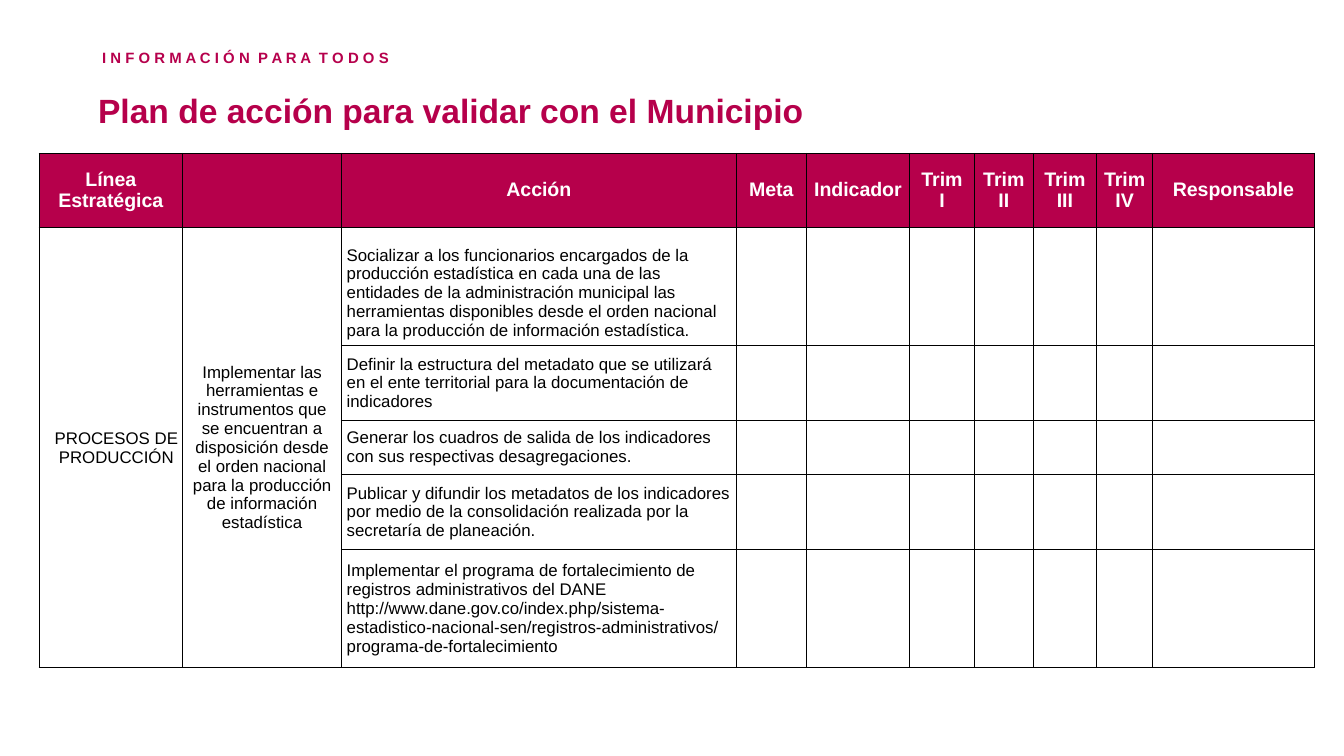
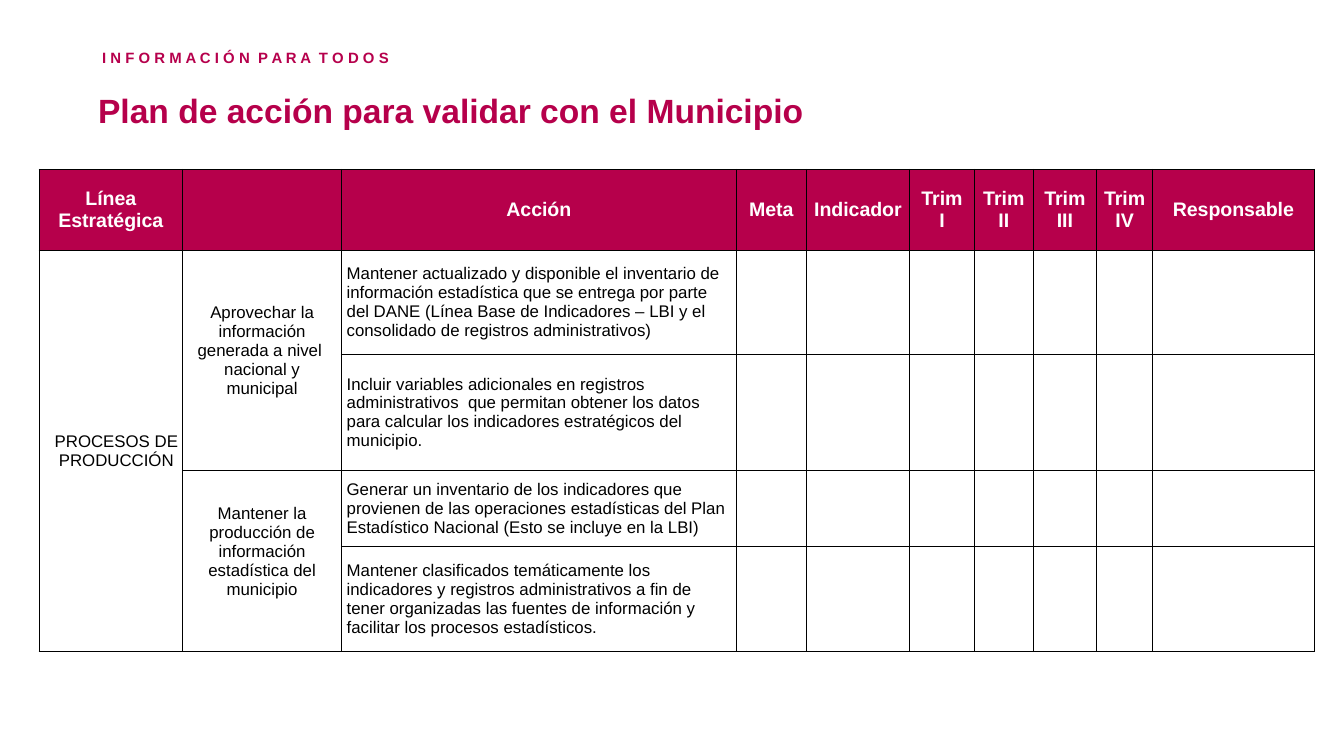
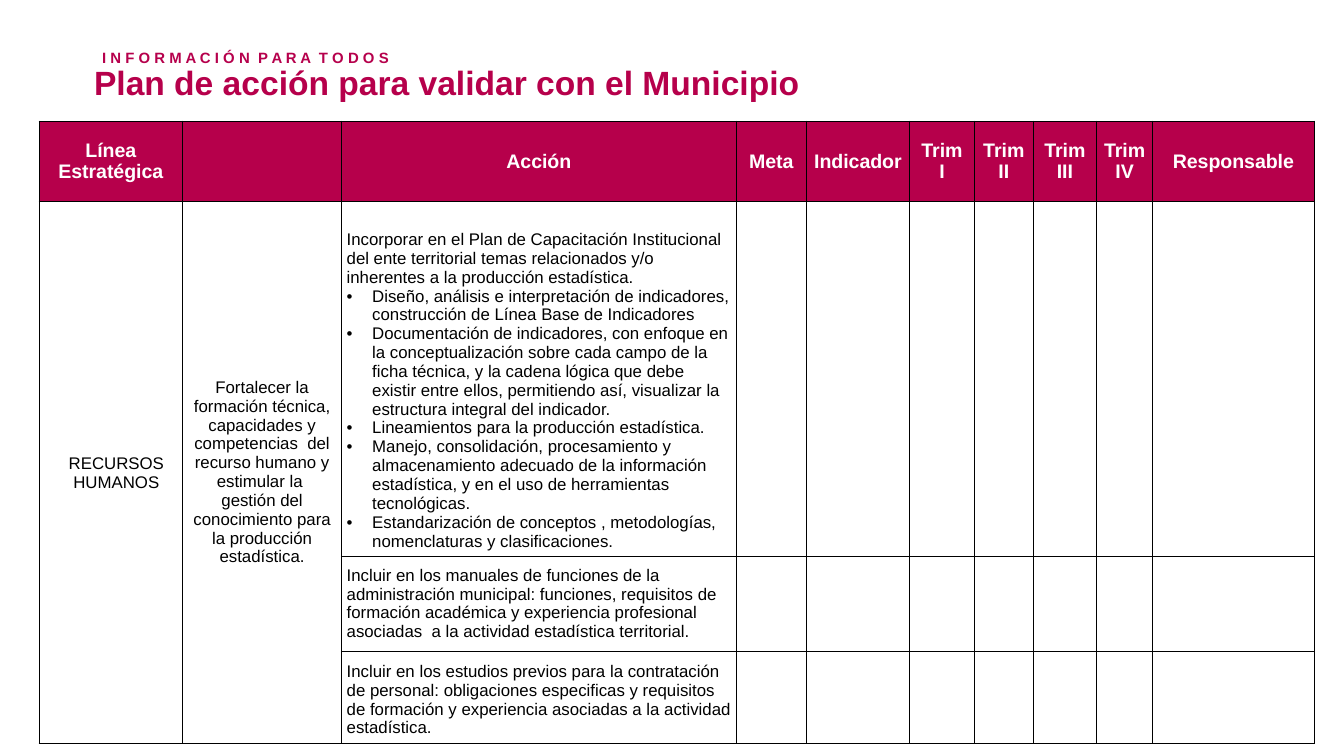
"""Build three action-plan slides, each with a heading and a plan table."""
from lxml import etree
from pptx import Presentation
from pptx.dml.color import RGBColor
from pptx.enum.text import MSO_ANCHOR, PP_ALIGN
from pptx.oxml.ns import qn
from pptx.util import Inches, Pt

LEFT, CENTER, JUSTIFY = PP_ALIGN.LEFT, PP_ALIGN.CENTER, PP_ALIGN.JUSTIFY
TOP, MIDDLE, BOTTOM = MSO_ANCHOR.TOP, MSO_ANCHOR.MIDDLE, MSO_ANCHOR.BOTTOM

CRIMSON = RGBColor(0xB6, 0x00, 0x4B)
TAGLINE_CRIMSON = RGBColor(0xB6, 0x00, 0x4C)
WHITE = RGBColor(0xFF, 0xFF, 0xFF)
BLACK = RGBColor(0x00, 0x00, 0x00)
FONT = "Arial"

TAGLINE = "I N F O R M A C I Ó N  P A R A  T O D O S"
TITLE = "Plan de acción para validar con el Municipio"
TABLE_LEFT = 0.29
COLUMNS = [
    ("Línea Estratégica", 1.07), ("", 1.18), ("Acción", 2.94), ("Meta", 0.52),
    ("Indicador", 0.77), (("Trim", "I"), 0.48), (("Trim", "II"), 0.44),
    (("Trim", "III"), 0.47), (("Trim", "IV"), 0.42), ("Responsable", 1.2),
]
NO_INSETS = (0, 0, 0, 0)
LINE_INSETS = (0.09, 0.01, 0.01, 0)
BODY_INSETS = (0.04, 0.04, 0.04, 0.04)
RAISED_INSETS = (0.04, 0.04, 0.04, 0.18)

PLANS = [
    {
        "title_at": (0.72, 0.67), "table_top": 1.14, "header_height": 0.55,
        "line": "PROCESOS DE PRODUCCIÓN", "strategy_insets": BODY_INSETS,
        "strategies": [
            ("Implementar las herramientas e instrumentos que se encuentran a disposición "
             "desde el orden nacional para la producción de información estadística", [
                 (0.88, BOTTOM, "Socializar a los funcionarios encargados de la producción "
                  "estadística en cada una de las entidades de la administración municipal las "
                  "herramientas disponibles desde el orden nacional para la producción de "
                  "información estadística."),
                 (0.56, MIDDLE, "Definir la estructura del metadato que se utilizará en el ente "
                  "territorial para la documentación de indicadores"),
                 (0.4, MIDDLE, "Generar los cuadros de salida de los indicadores con sus "
                  "respectivas desagregaciones."),
                 (0.56, MIDDLE, "Publicar y difundir los metadatos de los indicadores por medio "
                  "de la consolidación realizada por la secretaría de planeación."),
                 (0.88, MIDDLE, "Implementar el programa de fortalecimiento de registros "
                  "administrativos del DANE http://www.dane.gov.co/index.php/"
                  "sistema-estadistico-nacional-sen/registros-administrativos/"
                  "programa-de-fortalecimiento"),
             ]),
        ],
    },
    {
        "title_at": (0.72, 0.67), "table_top": 1.26, "header_height": 0.6,
        "line": "PROCESOS DE PRODUCCIÓN", "strategy_insets": RAISED_INSETS,
        "strategies": [
            ("Aprovechar la información generada a nivel  nacional y municipal", [
                (0.78, MIDDLE, "Mantener actualizado y disponible el inventario de información "
                 "estadística que se entrega por parte del DANE (Línea Base de Indicadores – LBI "
                 "y el consolidado de registros administrativos)"),
                (0.86, MIDDLE, "Incluir variables adicionales en registros administrativos  que "
                 "permitan obtener los datos para calcular los indicadores estratégicos del "
                 "municipio."),
            ]),
            ("Mantener la producción de información estadística del municipio", [
                (0.57, MIDDLE, "Generar un inventario de los indicadores que provienen de las "
                 "operaciones estadísticas del Plan Estadístico Nacional (Esto se incluye en la "
                 "LBI)"),
                (0.78, MIDDLE, "Mantener clasificados temáticamente los indicadores y registros "
                 "administrativos a fin de tener organizadas las fuentes de información y "
                 "facilitar los procesos estadísticos."),
            ]),
        ],
    },
    {
        "title_at": (0.69, 0.46), "table_top": 0.9, "header_height": 0.6,
        "line": "RECURSOS HUMANOS", "strategy_insets": BODY_INSETS,
        "strategies": [
            ("Fortalecer la formación técnica, capacidades y competencias  del recurso humano y "
             "estimular la  gestión del conocimiento para la producción estadística.", [
                 (2.63, BOTTOM, (
                     "Incorporar en el Plan de Capacitación Institucional del ente territorial "
                     "temas relacionados y/o inherentes a la producción estadística.",
                     "Diseño, análisis e interpretación de indicadores, construcción de Línea "
                     "Base de Indicadores",
                     "Documentación de indicadores, con enfoque en la conceptualización sobre "
                     "cada campo de la ficha técnica, y la cadena lógica que debe existir entre "
                     "ellos, permitiendo así, visualizar la estructura integral del indicador.",
                     "Lineamientos para la producción estadística.",
                     "Manejo, consolidación, procesamiento y almacenamiento adecuado de la "
                     "información estadística, y en el uso de herramientas tecnológicas.",
                     "Estandarización de conceptos , metodologías, nomenclaturas y "
                     "clasificaciones.")),
                 (0.71, MIDDLE, "Incluir en los manuales de funciones de la administración "
                  "municipal: funciones, requisitos de formación académica y experiencia "
                  "profesional asociadas  a la actividad estadística territorial."),
                 (0.68, BOTTOM, "Incluir en los estudios previos para la contratación de "
                  "personal: obligaciones especificas y requisitos de formación y experiencia "
                  "asociadas a la actividad estadística."),
             ]),
        ],
    },
]


def write_text(container, text, size=9, color=BLACK, bold=False, align=LEFT, anchor=MIDDLE,
               insets=BODY_INSETS, bullets=False, line_spacing=None):
    """Fill a cell or text frame; with bullets, every paragraph after the first gets one."""
    frame = getattr(container, "text_frame", container)
    container.vertical_anchor = anchor
    (container.margin_left, container.margin_top,
     container.margin_right, container.margin_bottom) = map(Inches, insets)
    frame.word_wrap = True
    lines = (text,) if isinstance(text, str) else text
    for index, line in enumerate(lines):
        paragraph = frame.add_paragraph() if index else frame.paragraphs[0]
        if bullets and index:
            add_bullet(paragraph)
        paragraph.alignment = align
        if line_spacing:
            paragraph.line_spacing = line_spacing
        font = paragraph.font
        if line:
            run = paragraph.add_run()
            run.text = line
            font = run.font
        font.name, font.size, font.bold = FONT, Pt(size), bold
        font.color.rgb = color


def add_bullet(paragraph):
    """Give a paragraph a hanging bullet."""
    properties = paragraph._p.get_or_add_pPr()
    properties.set("marL", str(Inches(0.19)))
    properties.set("indent", str(-Inches(0.19)))
    etree.SubElement(properties, qn("a:buFont")).set("typeface", FONT)
    etree.SubElement(properties, qn("a:buChar")).set("char", "•")


def style_cell(cell, fill):
    """Set a cell's fill and its thin black borders."""
    cell.fill.solid()
    cell.fill.fore_color.rgb = fill
    properties = cell._tc.get_or_add_tcPr()
    for index, side in enumerate(("a:lnL", "a:lnR", "a:lnT", "a:lnB")):
        border = etree.Element(qn(side), w=str(Pt(0.5)))
        solid = etree.SubElement(border, qn("a:solidFill"))
        etree.SubElement(solid, qn("a:srgbClr")).set("val", str(BLACK))
        properties.insert(index, border)


def add_heading(slide, title_at):
    """Add the tagline and the title."""
    tagline = slide.shapes.add_textbox(Inches(0.74), Inches(0.3), Inches(3.07), Inches(0.19))
    write_text(tagline.text_frame, TAGLINE, size=8, color=TAGLINE_CRIMSON, bold=True,
               align=JUSTIFY, anchor=TOP, insets=(0.02, 0.02, 0, 0), line_spacing=1.3)
    left, top = title_at
    title = slide.shapes.add_textbox(Inches(left), Inches(top), Inches(6.51), Inches(0.61))
    write_text(title.text_frame, TITLE, size=18, color=CRIMSON, bold=True, anchor=TOP,
               insets=(0.01, 0, 0, 0))


def add_plan_table(slide, plan):
    """Add the plan table, merging the line and strategy cells over their actions."""
    heights = [plan["header_height"]]
    heights += [height for _, actions in plan["strategies"] for height, _, _ in actions]
    widths = [width for _, width in COLUMNS]
    table = slide.shapes.add_table(
        len(heights), len(widths), Inches(TABLE_LEFT), Inches(plan["table_top"]),
        Inches(sum(widths)), Inches(sum(heights))).table
    table.first_row = table.horz_banding = False
    for column, width in zip(table.columns, widths):
        column.width = Inches(width)
    for row_index, height in enumerate(heights):
        table.rows[row_index].height = Inches(height)
        for cell in table.rows[row_index].cells:
            style_cell(cell, WHITE if row_index else CRIMSON)
    for column_index, (label, _) in enumerate(COLUMNS):
        write_text(table.cell(0, column_index), label, size=10.5, color=WHITE, bold=True,
                   align=CENTER, insets=NO_INSETS)
        for row_index in range(1, len(heights)):
            if column_index > 2:
                write_text(table.cell(row_index, column_index), "", insets=NO_INSETS)

    table.cell(1, 0).merge(table.cell(len(heights) - 1, 0))
    write_text(table.cell(1, 0), plan["line"], align=CENTER, insets=LINE_INSETS)
    row_index = 1
    for strategy, actions in plan["strategies"]:
        strategy_cell = table.cell(row_index, 1)
        strategy_cell.merge(table.cell(row_index + len(actions) - 1, 1))
        write_text(strategy_cell, strategy, align=CENTER, insets=plan["strategy_insets"])
        for _, anchor, action in actions:
            write_text(table.cell(row_index, 2), action, anchor=anchor, bullets=True)
            row_index += 1


def main():
    """Build and save the presentation."""
    presentation = Presentation()
    presentation.slide_width = Inches(10)
    presentation.slide_height = presentation.slide_width * 9 // 16
    for plan in PLANS:
        slide = presentation.slides.add_slide(presentation.slide_layouts[6])
        add_heading(slide, plan["title_at"])
        add_plan_table(slide, plan)
    presentation.save("out.pptx")


if __name__ == "__main__":
    main()
